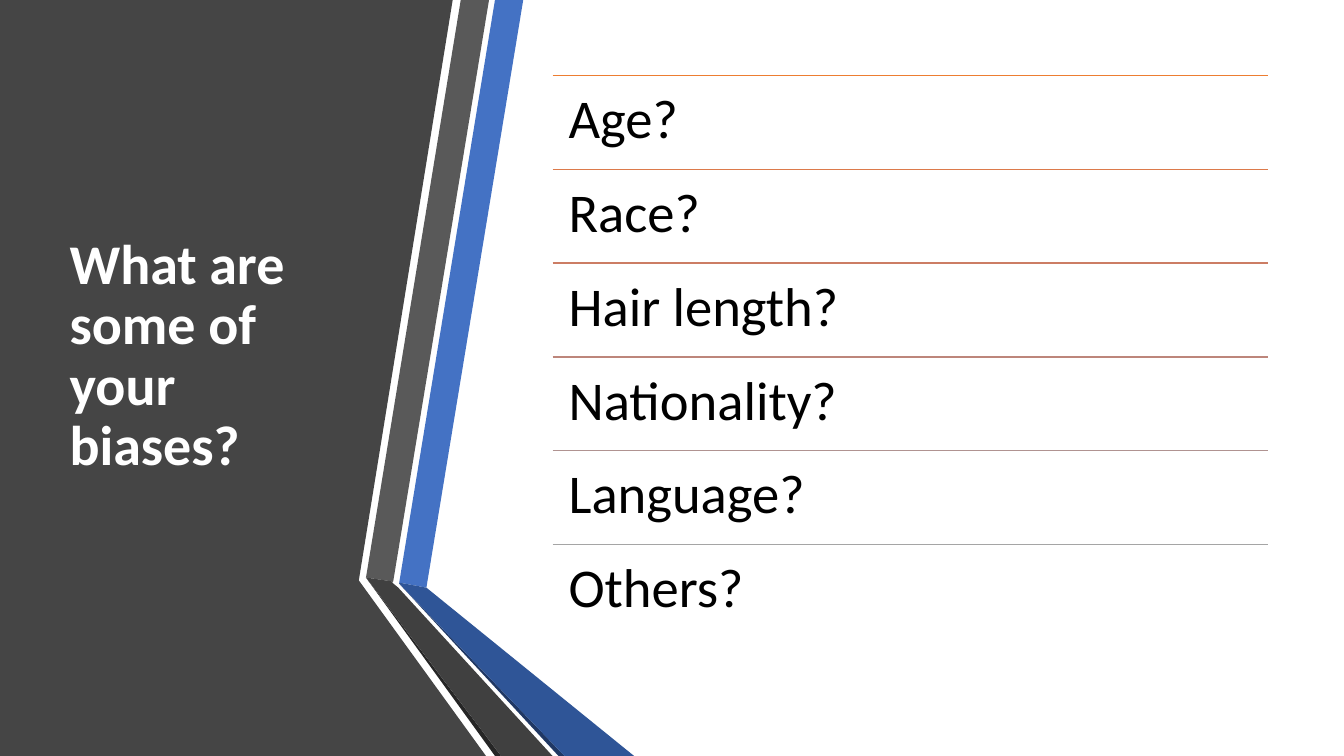
from lxml import etree
from pptx import Presentation
from pptx.dml.color import RGBColor
from pptx.enum.shapes import MSO_CONNECTOR
from pptx.enum.text import MSO_ANCHOR, MSO_AUTO_SIZE, PP_ALIGN
from pptx.oxml.ns import qn
from pptx.util import Pt

STRAIGHT = MSO_CONNECTOR.STRAIGHT
TOP, MIDDLE = MSO_ANCHOR.TOP, MSO_ANCHOR.MIDDLE
NO_AUTOFIT = MSO_AUTO_SIZE.NONE
LEFT = PP_ALIGN.LEFT

PX = 9144
SLIDE_SIZE = (1333, 750)
FONT = "Calibri"
COLORS = {
    "panel": "454545",
    "blue": "4472C4",
    "gray": "595959",
    "gray_edge": "262626",
    "blue_edge": "203864",
    "blue_fold": "2F5597",
    "gray_fold": "404040",
    "title": "FFFFFF",
    "text": "000000",
}

TITLE = "What are some of your biases?"
TITLE_BOX = (59, 75, 304, 558)
BIASES = [
    ("Age?", "ED7D31"),
    ("Race?", "DC7A4B"),
    ("Hair length?", "CC7D64"),
    ("Nationality?", "BD867B"),
    ("Language?", "B09391"),
    ("Others?", "A5A5A5"),
]
LIST_LEFT, LIST_TOP, LIST_WIDTH, ROW_HEIGHT = 548, 75, 710, 93
ROW_INSET = 16
RIBBONS = [
    ("panel", [(0, 0), (449, 0), (356, 575), (356, 576), (482, 750), (0, 750)]),
    ("blue", [(396, 578), (423, 583), (519, 0), (491, 0)]),
    ("gray", [(485, 0), (457, 0), (363, 573), (390, 577)]),
    ("gray_edge", [(363, 573), (491, 750), (497, 750)]),
    ("blue_edge", [(396, 579), (554, 750), (560, 750)]),
    ("blue_fold", [(396, 579), (560, 750), (629, 750), (423, 583), (396, 578)]),
    ("gray_fold", [(548, 750), (395, 583), (389, 578), (390, 577), (363, 573), (497, 750)]),
]


def color(name):
    return RGBColor.from_string(COLORS[name])


def place(shape, box):
    shape.left, shape.top, shape.width, shape.height = [length * PX for length in box]


def write(shape, text, size, color_name, anchor, bold=False):
    frame = shape.text_frame
    frame.text = text
    frame.word_wrap = True
    frame.auto_size = NO_AUTOFIT
    frame.vertical_anchor = anchor
    paragraph = frame.paragraphs[0]
    paragraph.alignment = LEFT
    paragraph.line_spacing = 0.9
    font = paragraph.font
    font.name, font.size, font.bold = FONT, Pt(size), bold
    font.color.rgb = color(color_name)


def add_ribbon(slide, color_name, points):
    builder = slide.shapes.build_freeform(*points[0], scale=PX)
    builder.add_line_segments(points[1:], close=True)
    ribbon = builder.convert_to_shape()
    ribbon.shadow.inherit = False
    ribbon.fill.solid()
    ribbon.fill.fore_color.rgb = color(color_name)
    ribbon.line.fill.background()


def add_title(slide):
    title = slide.shapes.title
    place(title, TITLE_BOX)
    write(title, TITLE, 40, "title", MIDDLE, bold=True)
    slide.shapes.element.append(title.element)


def add_bias(slide, row, text, rule_color):
    top = LIST_TOP + row * ROW_HEIGHT
    rule = slide.shapes.add_connector(
        STRAIGHT, LIST_LEFT * PX, top * PX, (LIST_LEFT + LIST_WIDTH) * PX, top * PX
    )
    rule.line.color.rgb = RGBColor.from_string(rule_color)
    rule.line.width = Pt(1)
    etree.SubElement(rule.element.spPr, qn("a:effectLst"))

    box = slide.shapes.add_textbox(0, 0, 0, 0)
    place(box, (LIST_LEFT, top, LIST_WIDTH, ROW_HEIGHT))
    frame = box.text_frame
    frame.margin_left = frame.margin_right = ROW_INSET * PX
    frame.margin_top = frame.margin_bottom = ROW_INSET * PX
    write(box, text, 39, "text", TOP)


def main():
    presentation = Presentation()
    presentation.slide_width, presentation.slide_height = [side * PX for side in SLIDE_SIZE]
    slide = presentation.slides.add_slide(presentation.slide_layouts.get_by_name("Title Only"))
    for color_name, points in RIBBONS:
        add_ribbon(slide, color_name, points)
    add_title(slide)
    for row, (text, rule_color) in enumerate(BIASES):
        add_bias(slide, row, text, rule_color)
    presentation.save("out.pptx")


if __name__ == "__main__":
    main()
